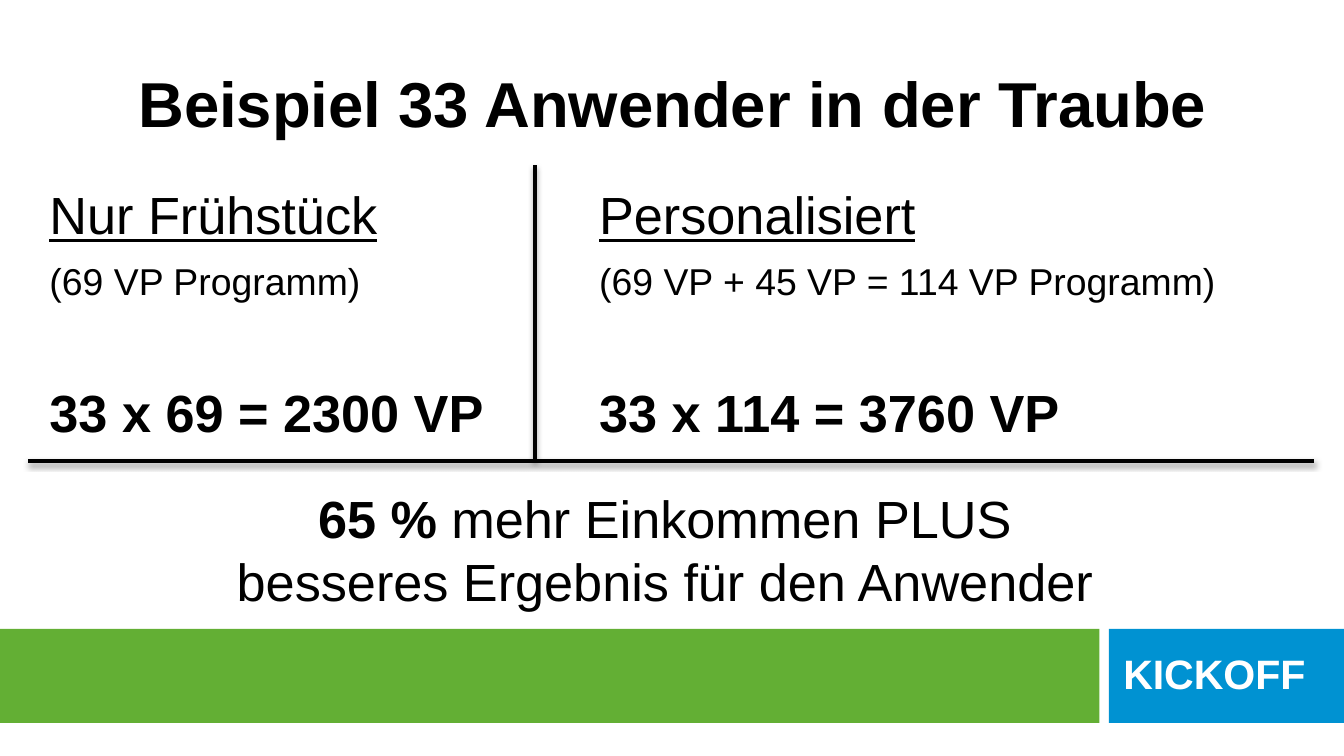
"""Build the slide comparing a breakfast-only and a personalised programme."""
from lxml.etree import SubElement
from pptx import Presentation
from pptx.dml.color import RGBColor
from pptx.enum.shapes import MSO_CONNECTOR, MSO_SHAPE
from pptx.enum.text import MSO_ANCHOR, PP_ALIGN
from pptx.oxml.ns import qn
from pptx.util import Inches, Pt

TITLE = "Beispiel 33 Anwender in der Traube"
COLUMNS = [
    (0.27, 3.53, "Nur Frühstück", "(69 VP Programm)", "33 x 69 = 2300 VP"),
    (4.36, 4.96, "Personalisiert", "(69 VP + 45 VP = 114 VP Programm)", "33 x 114 = 3760 VP"),
]
CONCLUSION = [
    ("65 % ", True),
    ("mehr Einkommen PLUS\nbesseres Ergebnis für den Anwender", False),
]
BADGE = "KICKOFF"
THEME = {
    "font": "Arial", "text": RGBColor(0, 0, 0), "light": RGBColor(255, 255, 255),
    "green": RGBColor(0x63, 0xAF, 0x34), "blue": RGBColor(0x00, 0x92, 0xD2),
    "title": 34, "large": 28, "badge": 22, "small": 20,
}
FOOTER_TOP, FOOTER_HEIGHT = 4.68, 0.7
BANDS = [(0, 8.18, "green"), (8.25, 1.75, "blue")]
RULE_Y, DIVIDER_X = 3.43, 3.98
RULES = [(DIVIDER_X, 1.23, DIVIDER_X, RULE_Y), (0.21, RULE_Y, 9.78, RULE_Y)]


def add_runs(para, runs):
    """Fill a paragraph with runs, turning newlines into line breaks."""
    for text, bold in runs:
        for index, line in enumerate(text.split("\n")):
            if index:
                para.add_line_break()
            span = para.add_run()
            span.text = line
            if len(runs) > 1:
                span.font.bold = bold


def add_box(page, left, top, width, height, paragraphs, anchor=MSO_ANCHOR.TOP):
    """Add a text box; each paragraph is a list of runs, a size and options."""
    box = page.shapes.add_textbox(Inches(left), Inches(top), Inches(width), Inches(height))
    frame = box.text_frame
    frame.word_wrap = True
    frame.vertical_anchor = anchor
    for index, (runs, size, options) in enumerate(paragraphs):
        para = frame.paragraphs[0] if index == 0 else frame.add_paragraph()
        para.alignment = options.get("align", PP_ALIGN.LEFT)
        para.space_before = Pt(options.get("before", 0))
        para.line_spacing = options.get("spacing", 1.0)
        para.font.name = THEME["font"]
        para.font.size = Pt(THEME[size])
        para.font.color.rgb = THEME[options.get("color", "text")]
        para.font.underline = options.get("underline", False)
        para.font.bold = runs[0][1] if len(runs) == 1 else None
        add_runs(para, runs)


def add_band(page, left, width, color):
    """Add one coloured footer band."""
    band = page.shapes.add_shape(
        MSO_SHAPE.RECTANGLE, Inches(left), Inches(FOOTER_TOP), Inches(width), Inches(FOOTER_HEIGHT)
    )
    band.shadow.inherit = False
    band.fill.solid()
    band.fill.fore_color.rgb = THEME[color]
    band.line.fill.background()


def add_rule(page, ends):
    """Add a black line with a soft shadow below it."""
    rule = page.shapes.add_connector(MSO_CONNECTOR.STRAIGHT, *map(Inches, ends))
    rule.line.color.rgb = THEME["text"]
    rule.line.width = Pt(2)
    effects = SubElement(rule._element.spPr, qn("a:effectLst"))
    shadow = SubElement(
        effects, qn("a:outerShdw"), blurRad=str(Pt(3.1)), dist=str(Pt(1.6)),
        dir="5400000", rotWithShape="0",
    )
    color = SubElement(shadow, qn("a:srgbClr"), val=str(THEME["text"]))
    SubElement(color, qn("a:alpha"), val="38000")


def main():
    """Assemble and save the deck."""
    deck = Presentation()
    deck.slide_width = Inches(10)
    deck.slide_height = deck.slide_width * 9 // 16
    page = deck.slides.add_slide(deck.slide_layouts[6])
    for band in BANDS:
        add_band(page, *band)
    add_box(page, 8.26, 4.85, 1.74, 0.4,
            [([(BADGE, True)], "badge", {"color": "light", "spacing": 0.8})])
    centred = {"align": PP_ALIGN.CENTER}
    add_box(page, 0.92, 0.29, 8.17, 0.94,
            [([(TITLE, True)], "title", centred)], MSO_ANCHOR.MIDDLE)
    for left, width, heading, programme, total in COLUMNS:
        add_box(page, left, 1.31, width, 3.42, [
            ([(heading, False)], "large", {"underline": True}),
            ([(programme, False)], "small", {"before": 7}),
            ([(total, True)], "large", {"before": 41}),
        ])
    add_box(page, 0, 3.57, 9.89, 1.04, [(CONCLUSION, "large", centred)])
    for ends in RULES:
        add_rule(page, ends)
    deck.save("out.pptx")


if __name__ == "__main__":
    main()
